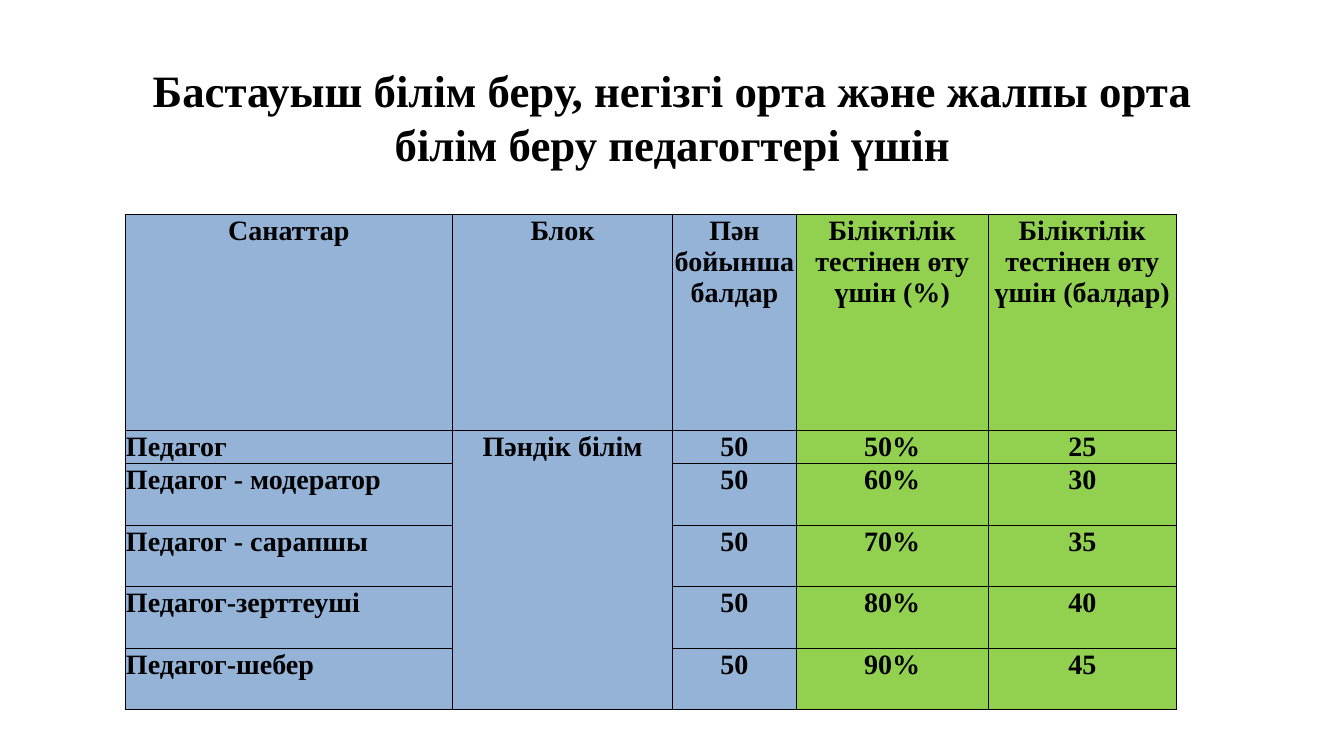
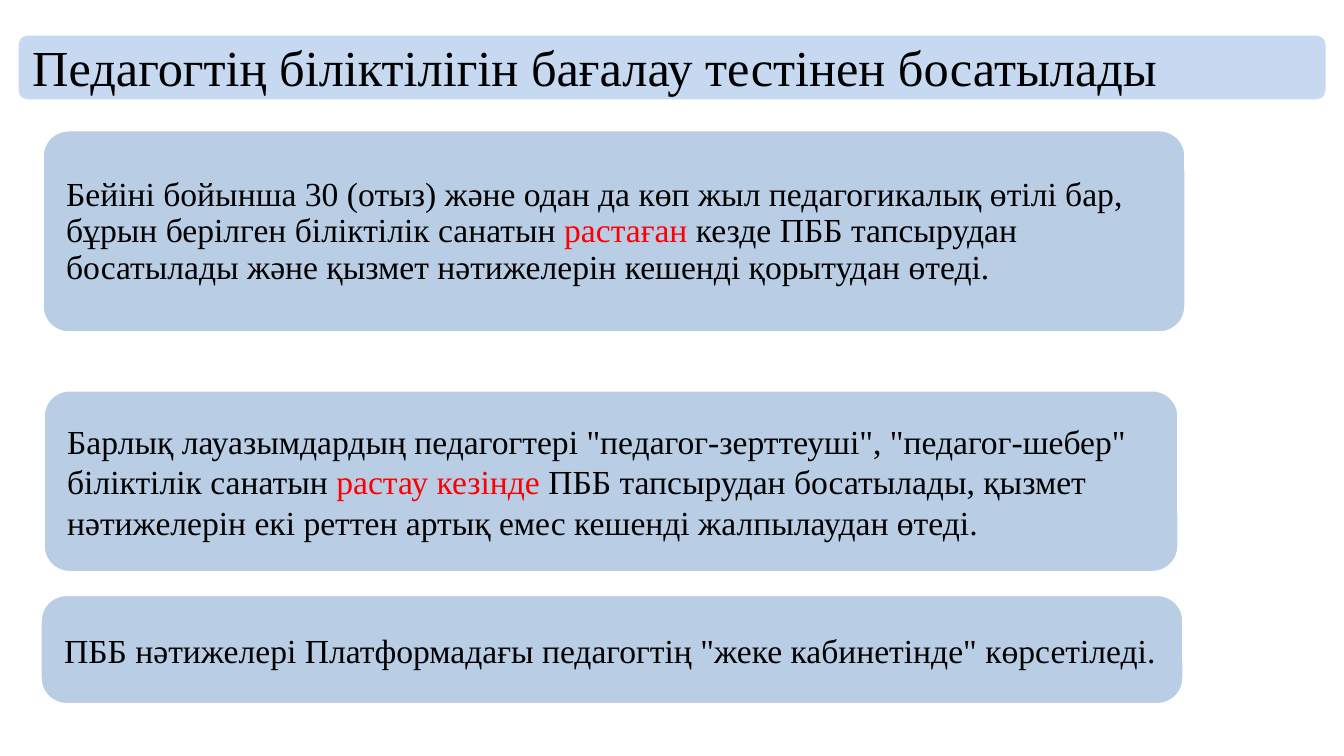
from lxml import etree
from pptx import Presentation
from pptx.dml.color import RGBColor
from pptx.enum.shapes import MSO_SHAPE
from pptx.enum.text import MSO_ANCHOR, PP_ALIGN
from pptx.oxml.ns import qn
from pptx.util import Inches, Pt

ROUND = MSO_SHAPE.ROUNDED_RECTANGLE
MIDDLE = MSO_ANCHOR.MIDDLE
LEFT, CENTER = PP_ALIGN.LEFT, PP_ALIGN.CENTER
FONT = "Times New Roman"
COLORS = {
    "ink": "000000",
    "paper": "FFFFFF",
    "accent": "FF0000",
    "banner": "C6D9F1",
    "card": "B9CDE5",
    "blue": "95B3D7",
    "green": "92D050",
}
WIDTH, HEIGHT = Inches(13.33), Inches(7.5)

HEADS = [
    "Санаттар",
    "Блок",
    "Пән бойынша балдар",
    "Біліктілік тестінен өту үшін (%)",
    "Біліктілік тестінен өту үшін (балдар)",
]
RANKS = [
    "Педагог",
    "Педагог - модератор",
    "Педагог - сарапшы",
    "Педагог-зерттеуші",
    "Педагог-шебер",
]
TOTAL = 50
RATES = range(50, 100, 10)
COLS = [3.25, 2.18, 1.23, 1.9, 1.87]
ROWS = [2.14, 0.33] + [0.61] * 4

CARDS = [
    ((3.15, 17.2, 85.07, 26.8), 26, [
        ("Бейіні бойынша 30 (отыз) және одан да көп жыл педагогикалық өтілі бар, "
         "бұрын берілген біліктілік санатын ", "ink"),
        ("растаған ", "accent"),
        ("кезде ПББ тапсырудан босатылады және қызмет нәтижелерін кешенді "
         "қорытудан өтеді.", "ink"),
    ]),
    ((3.23, 51.6, 84.47, 24.1), 29, [
        ("Барлық лауазымдардың педагогтері \"педагог-зерттеуші\", "
         "\"педагог-шебер\" біліктілік санатын ", "ink"),
        ("растау кезінде ", "accent"),
        ("ПББ тапсырудан босатылады, қызмет нәтижелерін екі реттен артық емес "
         "кешенді жалпылаудан өтеді.", "ink"),
    ]),
    ((3, 78.67, 85.07, 14.5), 29, [
        ("ПББ нәтижелері Платформадағы педагогтің \"жеке кабинетінде\" "
         "көрсетіледі.", "ink"),
    ]),
]


def color(name):
    return RGBColor.from_string(COLORS[name])


def place(box):
    left, top, wide, high = box
    return [int(part * side / 100) for part, side in
            ((left, WIDTH), (top, HEIGHT), (wide, WIDTH), (high, HEIGHT))]


def inset(item, side, top, base):
    item.margin_left = item.margin_right = Inches(side)
    item.margin_top, item.margin_bottom = Inches(top), Inches(base)


def write(frame, runs, size, pitch, align=LEFT, bold=False):
    frame.word_wrap = True
    para = frame.paragraphs[0]
    para.alignment = align
    para.line_spacing = Pt(pitch)
    para.font.name, para.font.size, para.font.bold = FONT, Pt(size), bold
    for text, tone in runs:
        run = para.add_run()
        run.text = text
        run.font.color.rgb = color(tone)


def title(slide, box, text):
    frame = slide.shapes.add_textbox(*place(box)).text_frame
    frame.vertical_anchor = MIDDLE
    write(frame, [(text, "ink")], 32, 38.6, CENTER, True)


def panel(slide, box, tone, radius, pad, runs, size, pitch):
    shape = slide.shapes.add_shape(ROUND, *place(box))
    shape.shadow.inherit = False
    shape.adjustments[0] = Inches(radius) / min(shape.width, shape.height)
    shape.fill.solid()
    shape.fill.fore_color.rgb = color(tone)
    shape.line.color.rgb = color("paper")
    shape.line.width = Pt(2)
    frame = shape.text_frame
    frame.vertical_anchor = MIDDLE
    inset(frame, *pad)
    write(frame, runs, size, pitch)


def border(cell):
    props = cell._tc.get_or_add_tcPr()
    for side in ("a:lnL", "a:lnR", "a:lnT", "a:lnB"):
        line = etree.SubElement(props, qn(side), w=str(Pt(0.5)))
        fill = etree.SubElement(line, qn("a:solidFill"))
        etree.SubElement(fill, qn("a:srgbClr"), val=COLORS["ink"])


def grid(slide, box, data):
    left, top, wide, high = place(box)
    table = slide.shapes.add_table(len(ROWS), len(COLS), left, top, wide, high).table
    for col, part in zip(table.columns, COLS):
        col.width = int(wide * part / sum(COLS))
    for row, part in zip(table.rows, ROWS):
        row.height = int(high * part / sum(ROWS))
    for r, line in enumerate(data):
        for c, text in enumerate(line):
            cell = table.cell(r, c)
            inset(cell, 0.01, 0.01, 0)
            border(cell)
            cell.fill.solid()
            cell.fill.fore_color.rgb = color("green" if c > 2 else "blue")
            if text:
                align = LEFT if r and not c else CENTER
                write(cell.text_frame, [(text, "ink")], 20, 22, align, True)
    table.cell(1, 1).merge(table.cell(len(RANKS), 1))


def scores(slide):
    title(slide, (6.9, 5.73, 86.27, 19.33),
          "Бастауыш білім беру, негізгі орта және жалпы орта білім беру "
          "педагогтері үшін")
    data = [HEADS]
    for n, (rank, rate) in enumerate(zip(RANKS, RATES)):
        block = "" if n else "Пәндік білім"
        data.append([rank, block, str(TOTAL), f"{rate}%", str(TOTAL * rate // 100)])
    grid(slide, (9.3, 28.4, 78.25, 65.5), data)


def waivers(slide):
    for box, pitch, runs in CARDS:
        panel(slide, box, "card", 0.26, (0.16, 0.16, 0.16), runs, 24, pitch)
    head = [("Педагогтің біліктілігін бағалау тестінен босатылады", "ink")]
    panel(slide, (1.28, 4.53, 97.45, 8.8), "banner", 0.1, (0.12, 0.09, 0.09),
          head, 36, 42)


def main():
    deck = Presentation()
    deck.slide_width, deck.slide_height = WIDTH, HEIGHT
    for build in (scores, waivers):
        build(deck.slides.add_slide(deck.slide_layouts[6]))
    deck.save("out.pptx")


if __name__ == "__main__":
    main()
